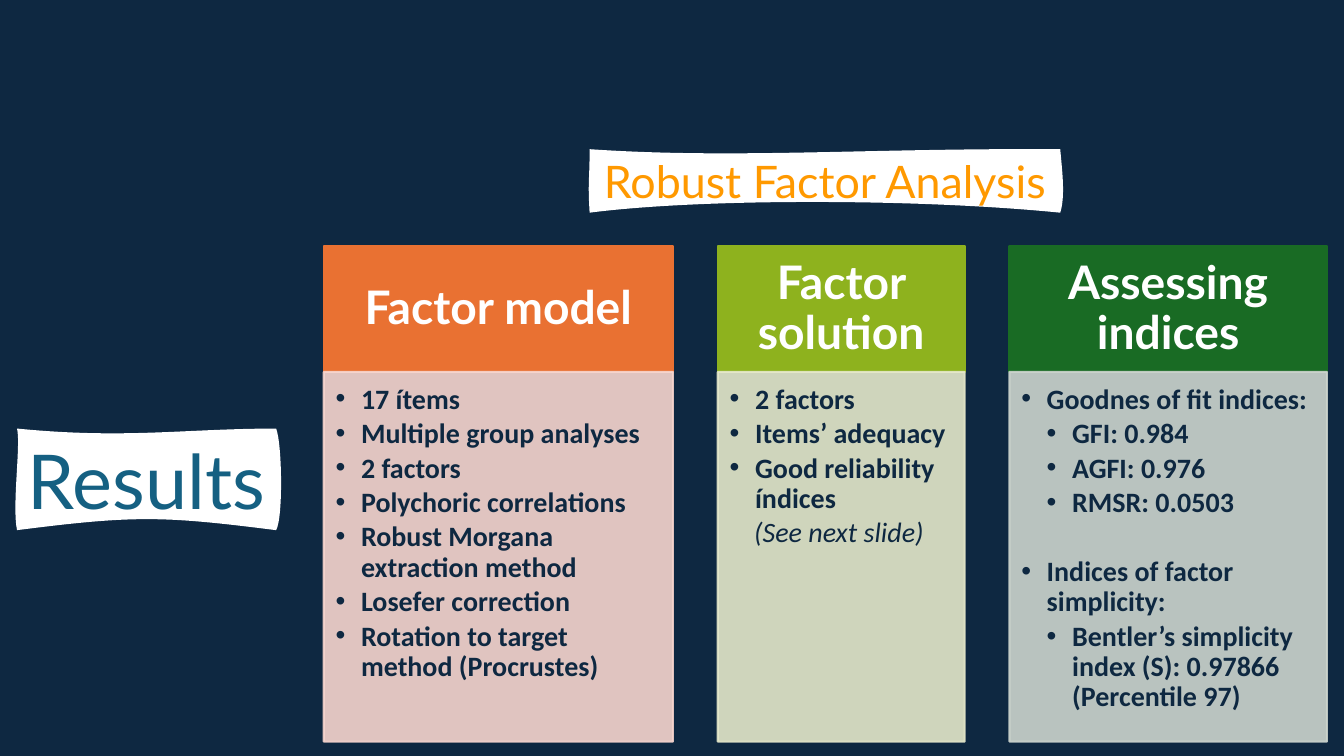
from lxml.etree import SubElement
from pptx import Presentation
from pptx.dml.color import RGBColor
from pptx.enum.shapes import MSO_SHAPE as Preset
from pptx.enum.text import MSO_ANCHOR as Anchor, PP_ALIGN as Align
from pptx.oxml.ns import qn
from pptx.util import Cm, Pt

COLORS = {
    "navy": "0E2841", "white": "FFFFFF", "blue": "156082", "amber": "FF9900",
    "orange": "E97132", "pink": "F7D5CE",
    "lime": "8EB21E", "pale_lime": "E5E8CA",
    "green": "196B24", "pale_green": "CCD4CD",
}

# Each banner: text, size, colour, start point, then four Bézier sides in cm
BANNERS = [
    ("Results", 54, "blue", (0.43, 10.8), [
        [(3.18, 11.07), (4.65, 10.8), (6.96, 10.8)],
        [(7.11, 11.18), (7.14, 13.03), (6.96, 13.36)],
        [(4.11, 13), (3.4, 12.98), (0.43, 13.36)],
        [(0.3, 12.73), (0.53, 11.2), (0.43, 10.8)]]),
    ("Robust Factor Analysis", 32, "amber", (14.86, 3.76), [
        [(18.52, 4.01), (21.84, 3.73), (26.72, 3.76)],
        [(26.77, 4.32), (26.85, 4.95), (26.72, 5.36)],
        [(23.09, 5), (17.65, 5), (14.86, 5.36)],
        [(14.81, 4.57), (14.86, 4.55), (14.86, 3.76)]]),
]

# Each column: heading, width in cm, heading fill, body fill, (level, text) items
COLUMNS = [
    ("Factor model", 8.8, "orange", "pink", [
        (1, "17 ítems"), (1, "Multiple group analyses"), (1, "2 factors"),
        (1, "Polychoric correlations"), (1, "Robust Morgana extraction method"),
        (1, "Losefer correction"), (1, "Rotation to target method (Procrustes)")]),
    ("Factor solution", 6.22, "lime", "pale_lime", [
        (1, "2 factors"), (1, "Items’ adequacy"), (1, "Good reliability índices"),
        (0, "(See next slide)")]),
    ("Assessing indices", 8, "green", "pale_green", [
        (1, "Goodnes of fit indices:"), (2, "GFI: 0.984"), (2, "AGFI: 0.976"),
        (2, "RMSR: 0.0503"), (1, "Indices of factor simplicity:"),
        (2, "Bentler’s simplicity index (S): 0.97866 (Percentile 97)")]),
]
COLUMNS_LEFT, COLUMNS_TOP, COLUMN_GAP = 8.16, 6.2, 1.13
HEADING_HEIGHT, BODY_HEIGHT = 3.17, 9.32


def rgb(name):
    return RGBColor.from_string(COLORS[name])


def set_font(paragraph, name, size, color, bold=False, italic=False):
    font = paragraph.font
    font.name, font.size = name, Pt(size)
    font.bold, font.italic = bold, italic
    font.color.rgb = rgb(color)


def bend_sides(shape, sides):
    """Turn the straight sides of a freeform into Bézier curves."""
    segments = list(shape._element.spPr.iter(qn("a:lnTo")))
    for segment, side in zip(segments, sides):
        segment.tag = qn("a:cubicBezTo")
        segment.clear()
        for x, y in side:
            SubElement(segment, qn("a:pt"), x=str(Cm(x) - shape.left),
                       y=str(Cm(y) - shape.top))


def add_banner(slide, text, size, color, start, sides):
    builder = slide.shapes.build_freeform(Cm(start[0]), Cm(start[1]))
    builder.add_line_segments([(Cm(x), Cm(y)) for *_, (x, y) in sides])
    shape = builder.convert_to_shape()
    bend_sides(shape, sides)
    shape.shadow.inherit = False
    shape.fill.solid()
    shape.fill.fore_color.rgb = rgb("white")
    shape.line.fill.background()
    frame = shape.text_frame
    frame.word_wrap = False
    frame.vertical_anchor = Anchor.MIDDLE
    paragraph = frame.paragraphs[0]
    paragraph.text = text
    paragraph.alignment = Align.CENTER
    set_font(paragraph, "Lato", size, color)


def add_panel(slide, left, top, width, height, color, margins):
    """Add a filled rectangle; margins are left, top, right, bottom in cm."""
    shape = slide.shapes.add_shape(
        Preset.RECTANGLE, Cm(left), Cm(top), Cm(width), Cm(height))
    shape.shadow.inherit = False
    shape.line.width = Pt(1.5)
    for fill in (shape.fill, shape.line.fill):
        fill.solid()
        fill.fore_color.rgb = rgb(color)
    frame = shape.text_frame
    frame.word_wrap = True
    (frame.margin_left, frame.margin_top,
     frame.margin_right, frame.margin_bottom) = map(Cm, margins)
    return shape


def make_translucent(shape, percent):
    for color in shape._element.spPr.iter(qn("a:srgbClr")):
        SubElement(color, qn("a:alpha"), val=str(percent * 1000))


def add_heading(slide, text, left, width, color):
    shape = add_panel(slide, left, COLUMNS_TOP, width, HEADING_HEIGHT, color,
                      (0.66, 0.4, 0.66, 0.36))
    shape.text_frame.vertical_anchor = Anchor.MIDDLE
    paragraph = shape.text_frame.paragraphs[0]
    paragraph.text = text
    paragraph.alignment = Align.CENTER
    paragraph.line_spacing = 0.9
    set_font(paragraph, "Lato", 33, "white", bold=True)


def format_item(paragraph, level):
    """Indent an item; level 0 is a centred italic remark without a bullet."""
    properties = paragraph._p.get_or_add_pPr()
    properties.set("marL", str(Cm(0.64 * max(level, 1))))
    properties.set("indent", str(-Cm(0.64)))
    if level:
        SubElement(properties, qn("a:buFont"), typeface="Arial")
        SubElement(properties, qn("a:buChar"), char="•")
    paragraph.alignment = Align.LEFT if level else Align.CENTER
    paragraph.line_spacing = 0.9
    paragraph.space_after = Pt(3)
    set_font(paragraph, "Calibri", 20, "navy", bold=level > 0, italic=level == 0)


def add_body(slide, items, left, width, color):
    shape = add_panel(slide, left, COLUMNS_TOP + HEADING_HEIGHT, width, BODY_HEIGHT,
                      color, (0.3, 0.33, 0.41, 0.43))
    make_translucent(shape, 90)
    frame = shape.text_frame
    frame.vertical_anchor = Anchor.TOP
    previous_level = 0
    for index, (level, text) in enumerate(items):
        paragraph = frame.add_paragraph() if index else frame.paragraphs[0]
        paragraph.text = text
        format_item(paragraph, level)
        if level == 1 and previous_level == 2:
            paragraph.space_before = Pt(24.8)
        previous_level = level


def main():
    presentation = Presentation()
    presentation.slide_width, presentation.slide_height = Cm(33.87), Cm(19.05)
    slide = presentation.slides.add_slide(presentation.slide_layouts[6])
    background = slide.background.fill
    background.solid()
    background.fore_color.rgb = rgb("navy")

    for banner in BANNERS:
        add_banner(slide, *banner)
    left = COLUMNS_LEFT
    for heading, width, heading_color, body_color, items in COLUMNS:
        add_heading(slide, heading, left, width, heading_color)
        add_body(slide, items, left, width, body_color)
        left += width + COLUMN_GAP
    presentation.save("out.pptx")


if __name__ == "__main__":
    main()
